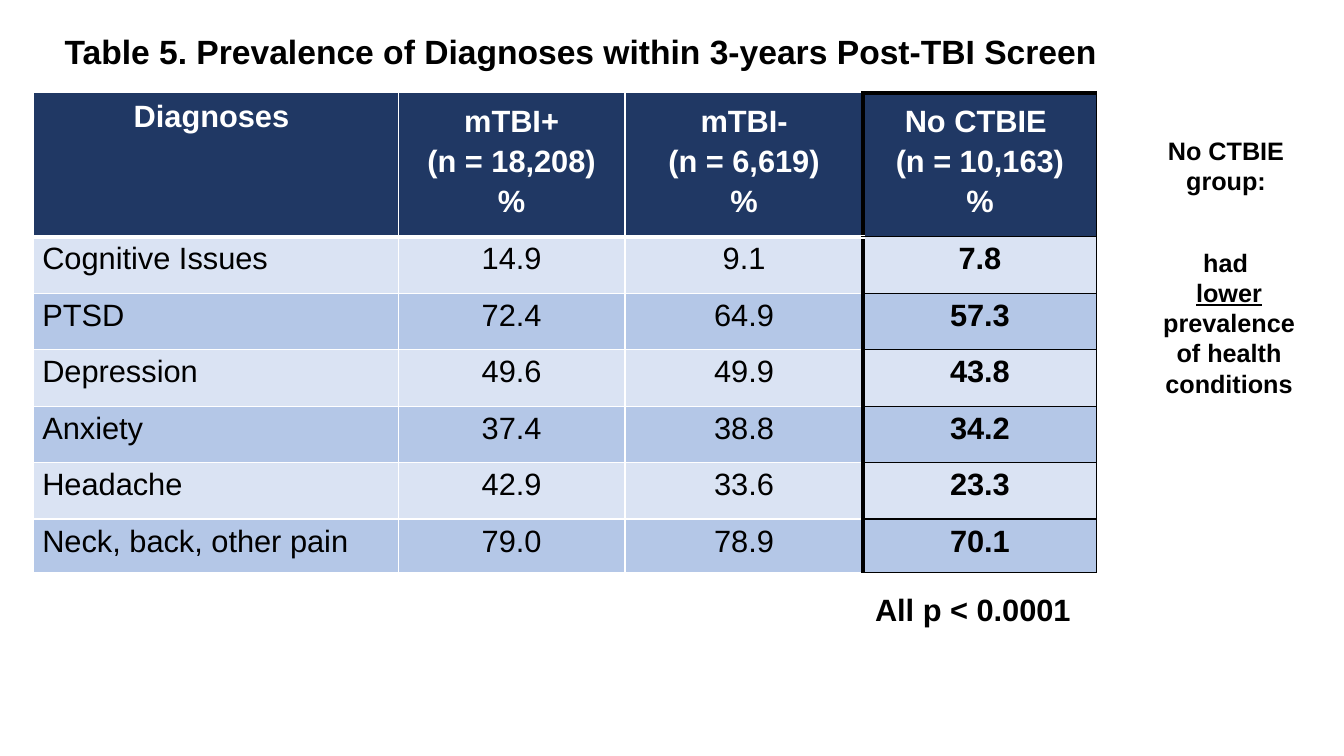
from lxml.etree import SubElement
from pptx import Presentation
from pptx.dml.color import RGBColor
from pptx.enum.text import MSO_ANCHOR as Anchor, MSO_AUTO_SIZE as AutoSize, PP_ALIGN as Align
from pptx.oxml.ns import qn
from pptx.util import Inches, Pt

BLACK, WHITE, NAVY = "000000", "FFFFFF", "203864"
BANDS = ["DAE3F3", "B4C7E7"]
COLUMN_WIDTHS = [3.62, 2.25, 2.36, 2.32]
ROW_HEIGHTS = [1.43] + [0.56] * 5 + [0.53]
ROWS = [
    ["Diagnoses ", "mTBI+\n(n = 18,208)\n%", "mTBI-\n(n = 6,619)\n%", "No CTBIE \n(n = 10,163)\n%"],
    ["Cognitive Issues", "14.9", "9.1", "7.8"],
    ["PTSD", "72.4", "64.9", "57.3"],
    ["Depression", "49.6", "49.9", "43.8"],
    ["Anxiety", "37.4", "38.8", "34.2"],
    ["Headache", "42.9", "33.6", "23.3"],
    ["Neck, back, other pain", "79.0", "78.9", "70.1"],
]


def color(value):
    return RGBColor.from_string(value)


def add_span(para, text, size=18, fill=BLACK, bold=True, underline=None):
    span = para.add_run()
    span.text = text
    font = span.font
    font.name, font.size, font.bold, font.underline = "Arial", Pt(size), bold, underline
    font.color.rgb = color(fill)


def write(frame, text, align=Align.CENTER, line_spacing=None, space_after=None, **style):
    """Put each line of the text in its own paragraph."""
    for index, line in enumerate(text.split("\n")):
        para = frame.add_paragraph() if index else frame.paragraphs[0]
        para.alignment = align
        para.line_spacing = line_spacing
        para.space_after = space_after
        add_span(para, line, **style)
    return para


def add_text_box(page, left, top, width, height, text, anchor=Anchor.TOP, grow=True, **style):
    box = page.shapes.add_textbox(Inches(left), Inches(top), Inches(width), Inches(height))
    frame = box.text_frame
    frame.word_wrap = True
    frame.vertical_anchor = anchor
    frame.auto_size = AutoSize.SHAPE_TO_FIT_TEXT if grow else AutoSize.NONE
    return write(frame, text, **style)


def set_borders(cell, **sides):
    """Draw the cell's borders; each side is a colour and a width in points."""
    properties = cell._tc.get_or_add_tcPr()
    for index, side in enumerate("LRTB"):
        line_color, points = sides[side]
        line = SubElement(properties, qn(f"a:ln{side}"), w=str(Pt(points)))
        SubElement(SubElement(line, qn("a:solidFill")), qn("a:srgbClr"), val=line_color)
        properties.insert(index, line)


def format_cell(cell, text, row, column):
    header, last = row == 0, column == len(COLUMN_WIDTHS) - 1
    cell.margin_left = cell.margin_right = Inches(0.13 if header else 0.09)
    cell.margin_top = cell.margin_bottom = Inches(0.07 if header else 0)
    cell.fill.solid()
    cell.fill.fore_color.rgb = color(NAVY if header else BANDS[(row - 1) % 2])
    write(
        cell.text_frame, text, size=22,
        align=Align.CENTER if header or column else Align.LEFT,
        line_spacing=None if header and column == 0 else 1.15,
        fill=WHITE if header else BLACK, bold=header or last,
    )
    # The last column is framed in black, with a heavy left and top edge
    if last:
        thin, heavy = (BLACK, 1), (BLACK, 3)
        set_borders(cell, L=heavy, R=thin, T=heavy if header else thin, B=thin)
    else:
        thin = (WHITE, 1)
        beside_frame = column == len(COLUMN_WIDTHS) - 2
        set_borders(cell, L=thin, R=(BLACK, 3) if beside_frame else thin,
                    T=thin, B=(WHITE, 3) if header else thin)


def add_diagnoses_table(page, left, top):
    table = page.shapes.add_table(
        len(ROWS), len(COLUMN_WIDTHS), Inches(left), Inches(top),
        Inches(sum(COLUMN_WIDTHS)), Inches(sum(ROW_HEIGHTS))).table
    for column, width in zip(table.columns, COLUMN_WIDTHS):
        column.width = Inches(width)
    for row, height in zip(table.rows, ROW_HEIGHTS):
        row.height = Inches(height)
    for row, texts in enumerate(ROWS):
        for column, text in enumerate(texts):
            format_cell(table.cell(row, column), text, row, column)


def add_side_note(page, left, top):
    add_text_box(page, left, top, 1.68, 0.71, "No CTBIE group:")
    para = add_text_box(page, left + 0.03, top + 1.11, 1.68, 1.62, "had \n")
    add_span(para, "lower", underline=True)
    add_span(para, " prevalence of health conditions")


def main():
    deck = Presentation()
    deck.slide_width, deck.slide_height = Inches(13.33), Inches(7.5)
    page = deck.slides.add_slide(deck.slide_layouts[6])

    # Title
    add_text_box(page, 0.01, 0.14, 11.5, 0.78,
                 "Table 5. Prevalence of Diagnoses within 3-years Post-TBI Screen",
                 anchor=Anchor.MIDDLE, grow=False, line_spacing=0.9, size=24)
    # Table and its significance note
    add_diagnoses_table(page, 0.33, 0.92)
    add_text_box(page, 8.58, 5.81, 2.29, 0.47, "All p < 0.0001",
                 align=Align.LEFT, space_after=Pt(6), size=22)
    # Remarks beside the table
    add_side_note(page, 11.32, 1.29)
    deck.save("out.pptx")


if __name__ == "__main__":
    main()
